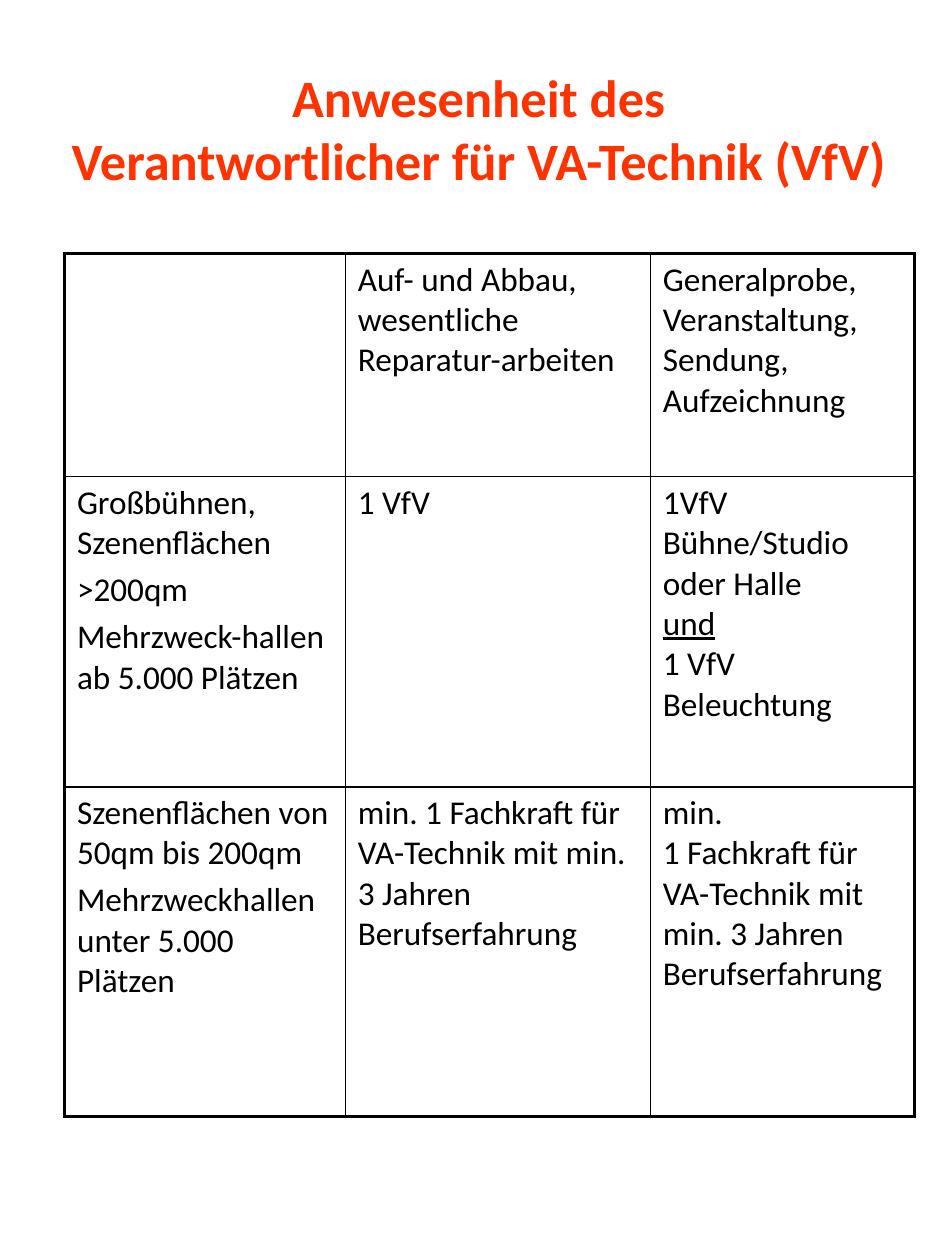
from lxml.etree import SubElement
from pptx import Presentation
from pptx.dml.color import RGBColor
from pptx.enum.text import MSO_ANCHOR, MSO_AUTO_SIZE, PP_ALIGN
from pptx.oxml.ns import qn
from pptx.util import Cm, Pt

COLORS = {"title": "FF3300", "text": "000000", "border": "000000"}
FONT = "Calibri"
THICK, THIN = Pt(2.25), Pt(1)


def style_font(font, size, color, bold=False):
    font.name = FONT
    font.size = Pt(size)
    font.bold = bold
    font.color.rgb = RGBColor.from_string(COLORS[color])


def add_borders(cell, widths):
    properties = cell._tc.get_or_add_tcPr()
    for position, (side, width) in enumerate(widths.items()):
        line = SubElement(properties, qn(f"a:ln{side}"), w=str(width))
        fill = SubElement(line, qn("a:solidFill"))
        SubElement(fill, qn("a:srgbClr"), val=COLORS["border"])
        properties.insert(position, line)


presentation = Presentation()
presentation.slide_width = Cm(19.05)
presentation.slide_height = Cm(25.4)
slide = presentation.slides.add_slide(presentation.slide_layouts[5])

title = slide.shapes.title
title.left, title.top, title.width, title.height = Cm(0.97), Cm(0.89), Cm(17.37), Cm(3.4)
heading = title.text_frame
heading.text = "Anwesenheit des\vVerantwortlicher für VA-Technik (VfV)"
heading.auto_size = MSO_AUTO_SIZE.NONE
heading.word_wrap = True
heading.vertical_anchor = MSO_ANCHOR.MIDDLE
heading.paragraphs[0].alignment = PP_ALIGN.CENTER
for run in heading.paragraphs[0].runs:
    style_font(run.font, 30, "title", bold=True)

requirements = [
    [
        "",
        "Auf- und Abbau, wesentliche Reparatur-arbeiten",
        "Generalprobe, Veranstaltung, Sendung, Aufzeichnung",
    ],
    [
        "Großbühnen, Szenenflächen\n>200qm\nMehrzweck-hallen ab 5.000 Plätzen",
        "1 VfV",
        "1VfV\nBühne/Studio oder Halle\nund\n1 VfV\nBeleuchtung",
    ],
    [
        "Szenenflächen von 50qm bis 200qm\nMehrzweckhallen unter 5.000 Plätzen",
        "min. 1 Fachkraft für VA-Technik mit min. 3 Jahren Berufserfahrung",
        "min.\n1 Fachkraft für VA-Technik mit min. 3 Jahren Berufserfahrung",
    ],
]
column_widths = [Cm(5.66), Cm(6.15), Cm(5.33)]
row_heights = [Cm(4.5), Cm(6.25), Cm(6.65)]
last_row, last_column = len(row_heights) - 1, len(column_widths) - 1

staffing = slide.shapes.add_table(
    len(row_heights), len(column_widths),
    Cm(1.3), Cm(5.11), sum(column_widths), sum(row_heights),
).table
staffing.first_row = False
staffing.horz_banding = False
for column, width in zip(staffing.columns, column_widths):
    column.width = width
for row, height in zip(staffing.rows, row_heights):
    row.height = height

for r, entries in enumerate(requirements):
    for c, entry in enumerate(entries):
        cell = staffing.cell(r, c)
        cell.text_frame.text = entry
        cell.vertical_anchor = MSO_ANCHOR.TOP
        cell.fill.background()
        add_borders(cell, {
            "L": THICK if c == 0 else THIN,
            "R": THICK if c == last_column else THIN,
            "T": THICK if r == 0 else THIN,
            "B": THICK if r == last_row else THIN,
        })
        for index, paragraph in enumerate(cell.text_frame.paragraphs):
            paragraph.space_before = Pt(3.8 if index and c != last_column else 0)
            for run in paragraph.runs:
                style_font(run.font, 19, "text")
                if run.text == "und":
                    run.font.underline = True

presentation.save("out.pptx")
